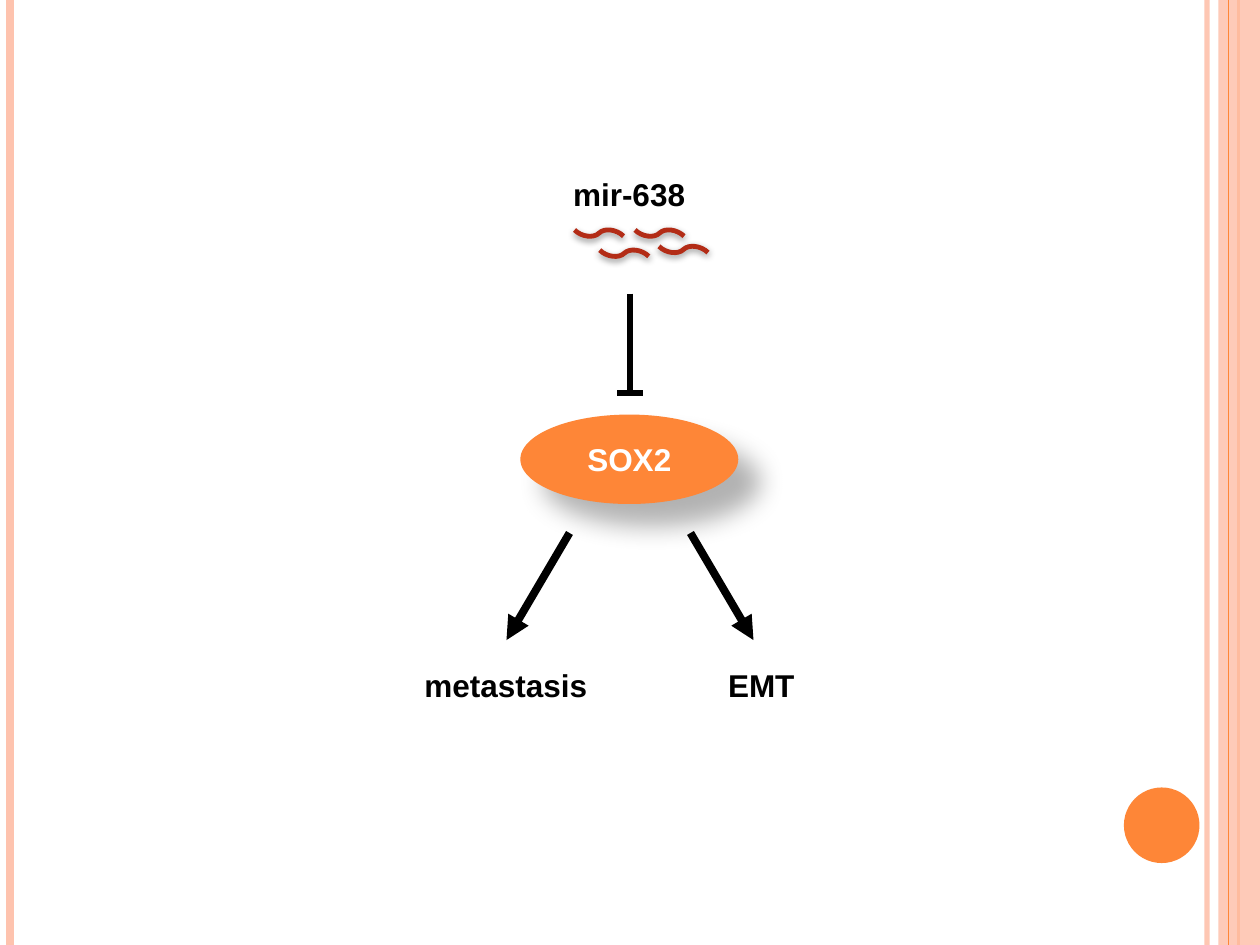
from pptx import Presentation
from pptx.dml.color import RGBColor
from pptx.enum import shapes as kinds, text
from pptx.oxml import parse_xml
from pptx.oxml.ns import nsdecls, qn
from pptx.util import Inches, Pt

PEACH = RGBColor(0xFE, 0xC3, 0xAE)
ORANGE = RGBColor(0xFE, 0x86, 0x37)
RED = RGBColor(0xB3, 0x2C, 0x16)
BLACK = RGBColor(0, 0, 0)
WHITE = RGBColor(0xFF, 0xFF, 0xFF)
LINE = kinds.MSO_CONNECTOR.STRAIGHT
CURVE = kinds.MSO_CONNECTOR.CURVE
OVAL = kinds.MSO_SHAPE.OVAL

prs = Presentation()
prs.slide_width, prs.slide_height = Inches(10), Inches(7.5)
slide = prs.slides.add_slide(prs.slide_layouts[6])
shapes = slide.shapes


def draw(kind, x1, y1, x2, y2, color, width):
    line = shapes.add_connector(kind, *map(Inches, (x1, y1, x2, y2)))
    line.line.color.rgb = color
    line.line.width = Pt(width)
    line._element.spPr.append(parse_xml(f"<a:effectLst {nsdecls('a')}/>"))
    return line


def shade(shape, alpha, blur, dist, angle):
    effects = shape._element.spPr.find(qn("a:effectLst"))
    effects.append(parse_xml(
        f'<a:outerShdw {nsdecls("a")} blurRad="{Pt(blur)}" dist="{Pt(dist)}" '
        f'dir="{angle * 60000}" algn="ctr" rotWithShape="0"><a:srgbClr val="000000">'
        f'<a:alpha val="{alpha * 1000}"/></a:srgbClr></a:outerShdw>'))


# Side stripes, band and corner disc
edge = draw(LINE, 9.58, 0, 9.58, 7.5, PEACH, 3)
draw(LINE, 0.08, 0, 0.08, 7.5, PEACH, 4.5)
draw(LINE, 9.83, 0, 9.83, 7.5, ORANGE, 1.5)
band = shapes.add_shape(kinds.MSO_SHAPE.RECTANGLE, Inches(9.67), 0, Inches(0.33), Inches(7.5))
draw(LINE, 9.75, 0, 9.75, 7.5, ORANGE, 0.75)
disc = shapes.add_shape(OVAL, Inches(8.92), Inches(6.25), Inches(0.6), Inches(0.6))

# RNA strands: curves turned by 45 degrees
for x, y in ((4.6, 1.73), (4.8, 1.89), (5.27, 1.86), (5.08, 1.73)):
    strand = draw(CURVE, x + 0.31, y, x, y + 0.24, RED, 2.75)
    strand._element.spPr.xfrm.set("rot", str(45 * 60000))
    shade(strand, 42, 4, 1.6, 90)

# Blocking bar from the RNA to the gene
draw(LINE, 5, 2.33, 5, 3.12, BLACK, 3)
draw(LINE, 5.1, 3.12, 4.9, 3.12, BLACK, 3)

# Gene
gene = shapes.add_shape(OVAL, Inches(4.13), Inches(3.29), Inches(1.73), Inches(0.71))
for shape, color in ((band, PEACH), (disc, ORANGE), (gene, ORANGE)):
    shape.shadow.inherit = False
    shape.fill.solid()
    shape.fill.fore_color.rgb = color
    shape.line.fill.background()
shade(gene, 30, 15, 18, 45)
gene.text_frame.text = "SOX2"
gene.text_frame.vertical_anchor = text.MSO_ANCHOR.MIDDLE
gene.text_frame.paragraphs[0].alignment = text.PP_ALIGN.CENTER

# Slightly clear stripe and band
for part, alpha in ((edge, 93), (band, 87)):
    tint = next(part._element.spPr.iter(qn("a:srgbClr")))
    tint.append(parse_xml(f'<a:alpha {nsdecls("a")} val="{alpha * 1000}"/>'))

# Labels
labels = [(gene, WHITE)]
for words, x, y, width in (("mir-638", 4.45, 1.34, 1.1),
                           ("metastasis", 3.27, 5.24, 1.51),
                           ("EMT", 5.68, 5.24, 0.73)):
    box = shapes.add_textbox(Inches(x), Inches(y), Inches(width), Inches(0.4))
    box.text_frame.text = words
    box.text_frame.word_wrap = False
    box.text_frame.auto_size = text.MSO_AUTO_SIZE.SHAPE_TO_FIT_TEXT
    labels.append((box, BLACK))
for label, color in labels:
    font = label.text_frame.paragraphs[0].font
    font.name, font.size, font.bold = "Arial", Pt(18), True
    font.color.rgb = color

# Arrows to the two effects, mirrored about the centre
for side in (-1, 1):
    arrow = draw(LINE, 5 + side * 0.48, 4.23, 5 + side * 0.98, 5.08, BLACK, 4.5)
    arrow.line._ln.append(parse_xml(f'<a:tailEnd {nsdecls("a")} type="triangle"/>'))

prs.save("out.pptx")
